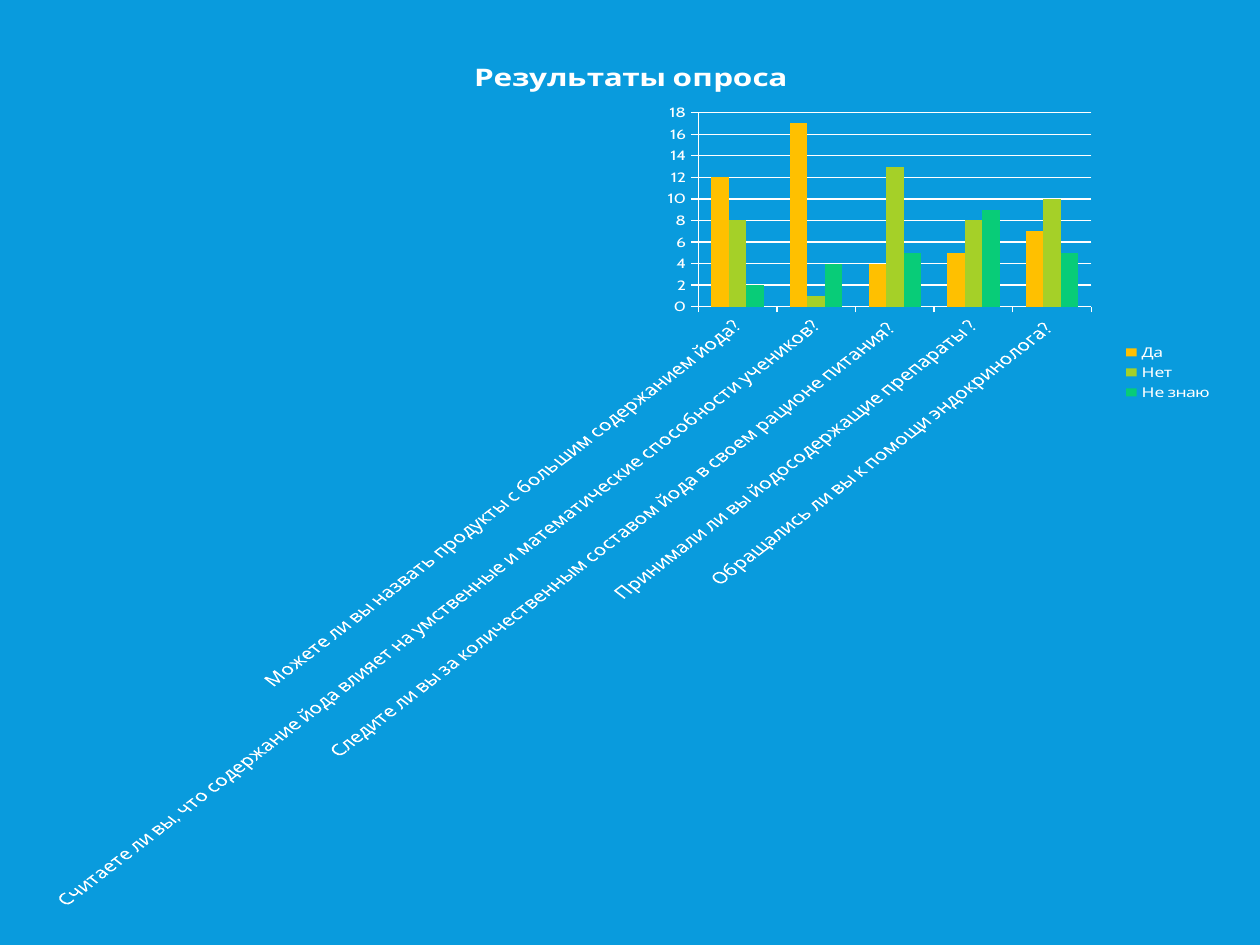
import pptx
import pptx.chart.data
import pptx.dml.color
import pptx.enum.chart
import pptx.util

CATEGORIES = [
    "Можете ли вы назвать продукты с большим содержанием йода?",
    "Считаете ли вы, что содержание йода влияет на умственные и математические способности учеников?",
    "Следите ли вы за количественным составом йода в своем рационе питания? ",
    "Принимали ли вы йодосодержащие препараты ?",
    "Обращались ли вы к помощи эндокринолога? ",
]
ANSWERS = {
    "Да": ("FFC000", [12, 17, 4, 5, 7]),
    "Нет": ("A5D028", [8, 1, 13, 8, 10]),
    "Не знаю": ("08CC78", [2, 4, 5, 9, 5]),
}


def rgb(value):
    return pptx.dml.color.RGBColor.from_string(value)


def px(n):
    return pptx.util.Emu(n * 914400 // 126)


class Deck:
    """Holds the style and the current slide."""

    font, text, back = "Cabin", "FFFFFF", "099BDD"

    def __init__(self, prs):
        self.s = prs.slides.add_slide(prs.slide_layouts[6])
        self.fill(self.s.background, self.back)

    def fill(self, item, color):
        item.fill.solid()
        item.fill.fore_color.rgb = rgb(color)

    def style(self, font, size, bold=False):
        values = {"name": self.font, "size": pptx.util.Pt(size), "bold": bold}
        for key, value in values.items():
            setattr(font, key, value)
        font.color.rgb = rgb(self.text)

    def line(self, fmt):
        fmt.line.color.rgb = rgb(self.text)
        fmt.line.width = pptx.util.Pt(0.75)

    def axis(self, axis, size, grid):
        axis.has_major_gridlines = grid
        axis.major_tick_mark = pptx.enum.chart.XL_TICK_MARK.OUTSIDE
        self.style(axis.tick_labels.font, size)
        self.line(axis.format)
        if grid:
            self.line(axis.major_gridlines.format)

    def title(self, chart, text):
        chart.has_title = True
        p = chart.chart_title.text_frame.paragraphs[0]
        r = p.add_run()
        r.text = text
        self.style(r.font, 18, True)
        chart.chart_title.include_in_layout = False

    def legend(self, chart):
        chart.has_legend = True
        chart.legend.position = pptx.enum.chart.XL_LEGEND_POSITION.RIGHT
        chart.legend.include_in_layout = False
        self.style(chart.legend.font, 10)

    def columns(self, box, title, categories, answers):
        data = pptx.chart.data.CategoryChartData()
        data.categories = categories
        for name, (_, values) in answers.items():
            data.add_series(name, values)
        kind = pptx.enum.chart.XL_CHART_TYPE.COLUMN_CLUSTERED
        chart = self.s.shapes.add_chart(kind, *map(px, box), data).chart
        self.style(chart.font, 10)
        self.title(chart, title)
        self.legend(chart)
        self.axis(chart.category_axis, 12, False)
        self.axis(chart.value_axis, 10, True)
        body = chart.category_axis.tick_labels.font._element.getparent().getparent().getparent()
        body.bodyPr.set("rot", "-2700000")
        plot = chart.plots[0]
        plot.gap_width = 150
        plot.vary_by_categories = False
        for series, (color, _) in zip(plot.series, answers.values()):
            self.fill(series.format, color)


def main():
    prs = pptx.Presentation()
    prs.slide_width, prs.slide_height = px(1260), px(945)
    Deck(prs).columns((35, 37, 1191, 873), "Результаты опроса", CATEGORIES, ANSWERS)
    prs.save("out.pptx")


if __name__ == "__main__":
    main()
